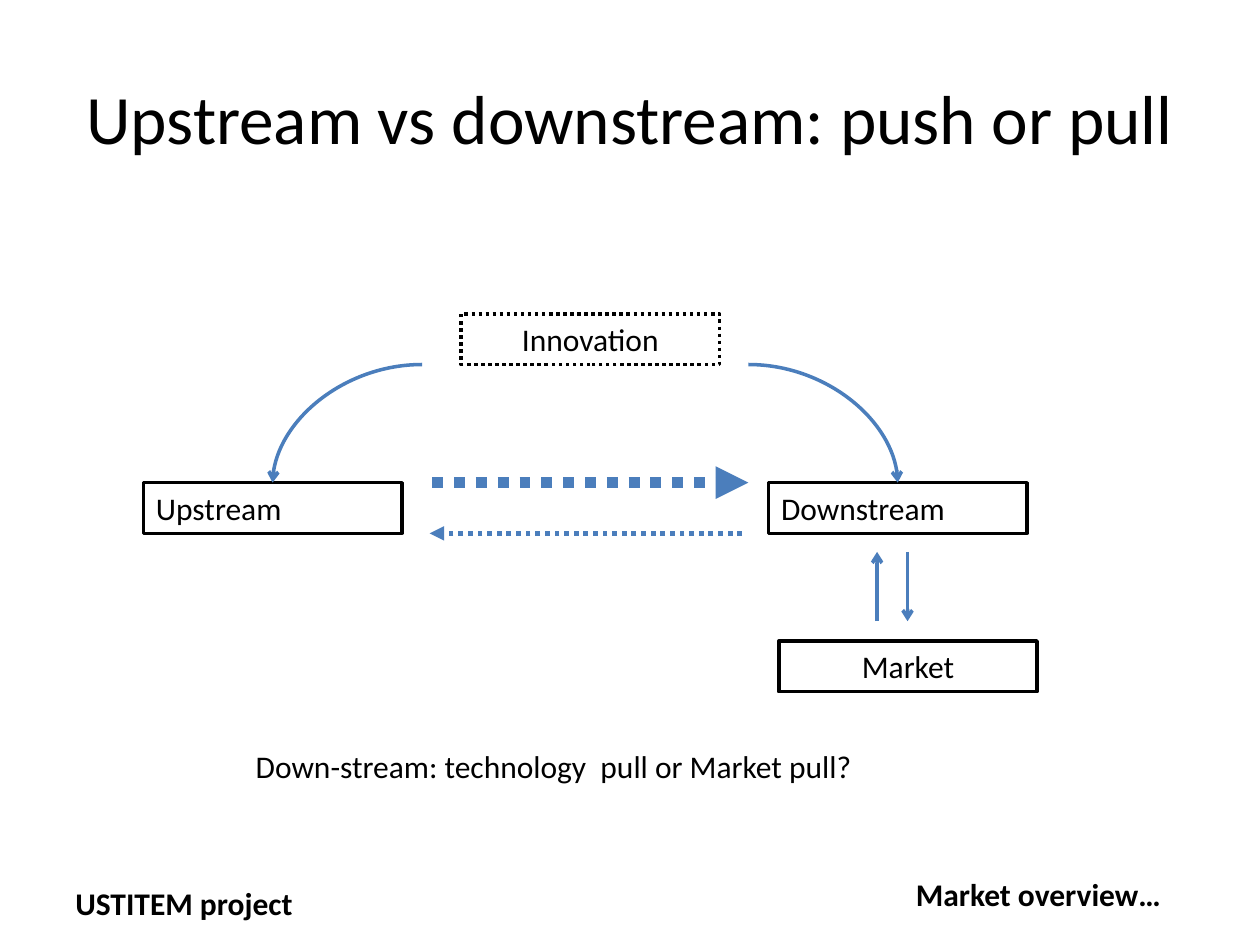
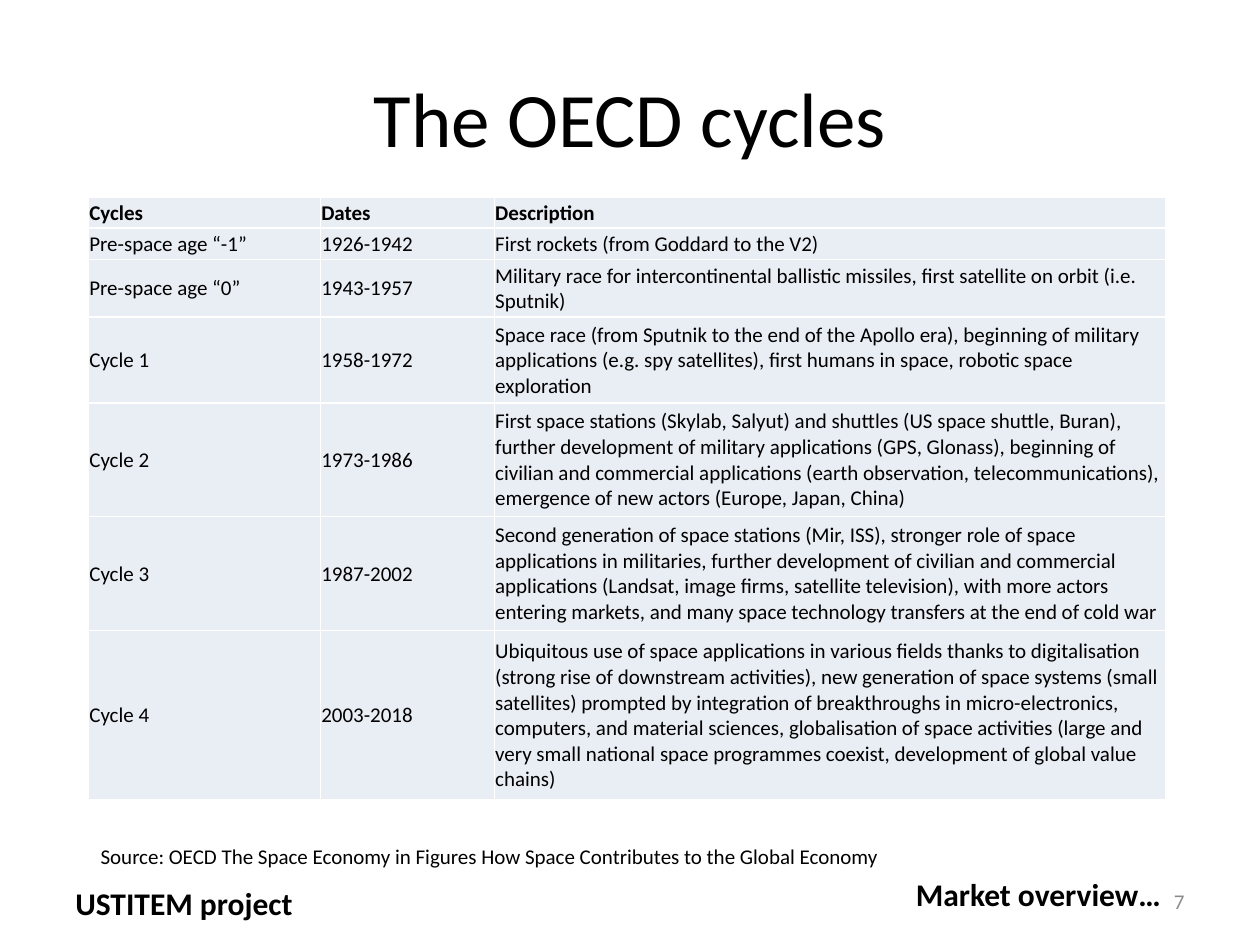
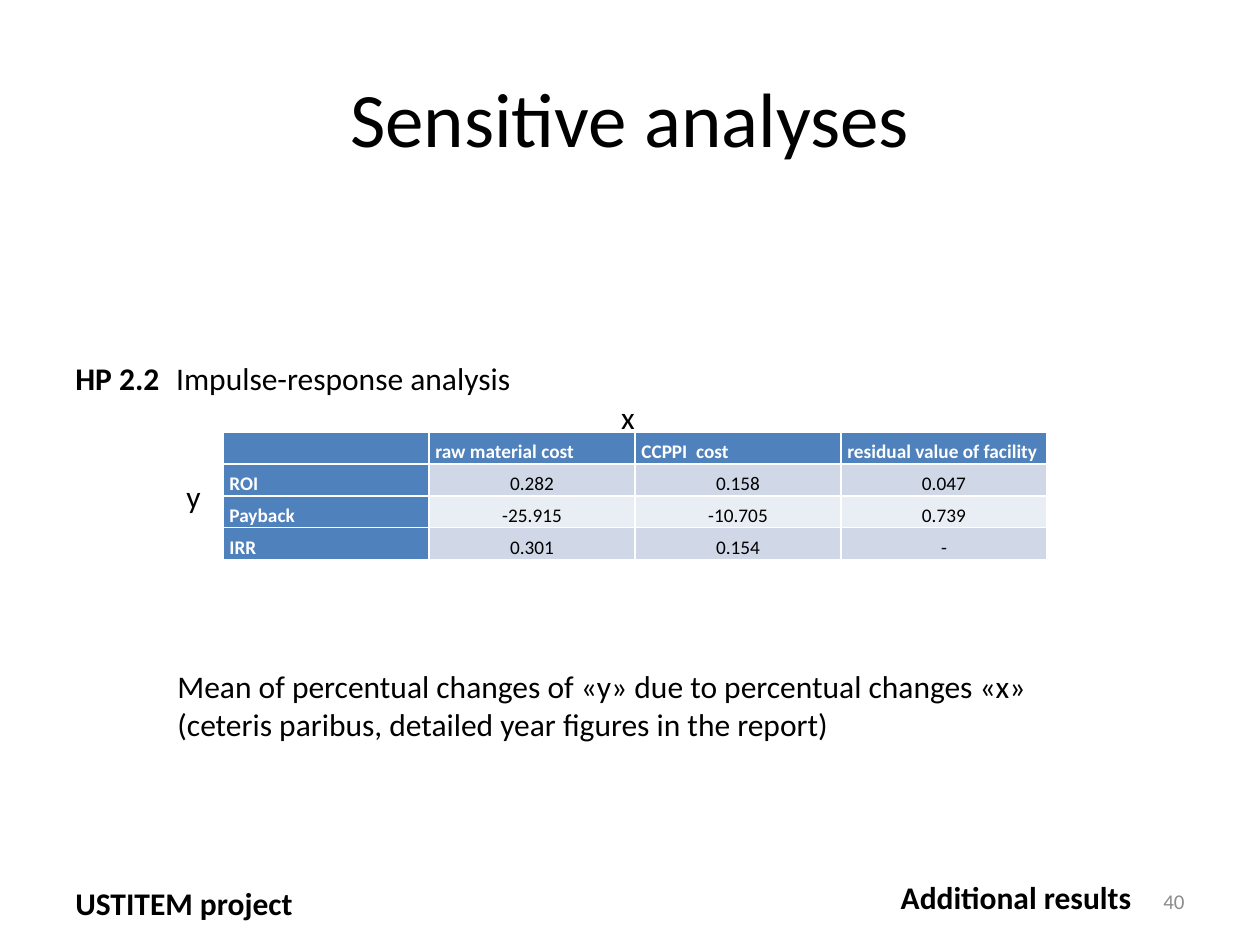
import lxml.etree
import pptx
import pptx.dml.color
import pptx.enum.dml
import pptx.enum.shapes
import pptx.enum.text
import pptx.oxml.ns
import pptx.util

Pt = pptx.util.Pt
qn = pptx.oxml.ns.qn
ALIGN = pptx.enum.text.PP_ALIGN
ANCHOR = pptx.enum.text.MSO_ANCHOR
DASH = pptx.enum.dml.MSO_LINE
CONNECTOR = pptx.enum.shapes.MSO_CONNECTOR

FONT = "Calibri"
COLORS = {
    "text": "000000",
    "white": "FFFFFF",
    "muted": "8C8C8C",
    "arrow": "4B7EBC",
    "header": "4F81BD",
    "band_dark": "D0D8E8",
    "band_light": "E9EDF4",
}
BODY_SIZE = 18
TITLE_BOX = (36, 21.6, 648, 90)
PROJECT_BOX = (36, 501.8, 144, 29)
NUMBER_BOX = (516.25, 500.4, 167.75, 29)
OVERVIEW_BOX = (516.25, 496.4, 156.2, 29)
RESULTS_BOX = (507.6, 498.2, 147.6, 29)

CYCLES = [
    ("Cycles", "Dates", "Description"),
    ("Pre-space age “-1”", "1926-1942", "First rockets (from Goddard to the V2)"),
    ("Pre-space age “0”", "1943-1957",
     "Military race for intercontinental ballistic missiles, first satellite "
     "on orbit (i.e. Sputnik)"),
    ("Cycle 1", "1958-1972",
     "Space race (from Sputnik to the end of the Apollo era), beginning of "
     "military applications (e.g. spy satellites), first humans in space, "
     "robotic space exploration"),
    ("Cycle 2", "1973-1986",
     "First space stations (Skylab, Salyut) and shuttles (US space shuttle, "
     "Buran), further development of military applications (GPS, Glonass), "
     "beginning of civilian and commercial applications (earth observation, "
     "telecommunications), emergence of new actors (Europe, Japan, China)"),
    ("Cycle 3", "1987-2002",
     "Second generation of space stations (Mir, ISS), stronger role of space "
     "applications in militaries, further development of civilian and "
     "commercial applications (Landsat, image firms, satellite television), "
     "with more actors entering markets, and many space technology transfers "
     "at the end of cold war"),
    ("Cycle 4", "2003-2018",
     "Ubiquitous use of space applications in various fields thanks to "
     "digitalisation (strong rise of downstream activities), new generation "
     "of space systems (small satellites) prompted by integration of "
     "breakthroughs in micro-electronics, computers, and material sciences, "
     "globalisation of space activities (large and very small national space "
     "programmes coexist, development of global value chains)"),
]
CYCLE_COLUMNS = (132.5, 99.4, 383.7)
CYCLE_ROWS = (17.3, 18, 33, 49, 65, 65, 97)

RESPONSES = [
    ("", "raw material cost", "CCPPI  cost", "residual value of facility"),
    ("ROI", "0.282", "0.158", "0.047"),
    ("Payback", "-25.915", "-10.705", "0.739"),
    ("IRR", "0.301", "0.154", "-"),
]


def rgb(name):
    return pptx.dml.color.RGBColor.from_string(COLORS[name])


def points(values):
    return [Pt(value) for value in values]


def write(p, text, size=BODY_SIZE, color="text", bold=False, align=ALIGN.LEFT):
    """Add one run, or only set the paragraph's size when there is no text."""
    p.alignment = align
    if not text:
        lxml.etree.SubElement(p._p, qn("a:endParaRPr"), sz=str(size * 100))
        return
    r = p.add_run()
    r.text = text
    r.font.name = FONT
    r.font.size = Pt(size)
    r.font.bold = bold
    r.font.color.rgb = rgb(color)


def add_text(s, box, *lines, wrap=False, anchor=ANCHOR.TOP, **style):
    """Write each line as a paragraph of one text box."""
    tf = s.shapes.add_textbox(*points(box)).text_frame
    tf.word_wrap = wrap
    tf.vertical_anchor = anchor
    for i, line in enumerate(lines):
        write(tf.add_paragraph() if i else tf.paragraphs[0], line, **style)


def add_node(s, box, text, align=ALIGN.CENTER, dash=None):
    sp = s.shapes.add_shape(pptx.enum.shapes.MSO_SHAPE.RECTANGLE, *points(box))
    sp.shadow.inherit = False
    sp.fill.background()
    sp.line.color.rgb = rgb("text")
    sp.line.width = Pt(2)
    sp.line.dash_style = dash
    tf = sp.text_frame
    tf.word_wrap = True
    tf.vertical_anchor = ANCHOR.TOP
    write(tf.paragraphs[0], text, align=align)


def add_arrow(s, start, end, width=2, head="arrow", dash=None, curved=False):
    kind = CONNECTOR.CURVE if curved else CONNECTOR.STRAIGHT
    sp = s.shapes.add_connector(kind, *points((*start, *end)))
    sp.line.color.rgb = rgb("arrow")
    sp.line.width = Pt(width)
    sp.line.dash_style = dash
    sp_pr = sp._element.spPr
    if curved:
        sp_pr.find(qn("a:prstGeom")).set("prst", "curvedConnector2")
    lxml.etree.SubElement(sp_pr.find(qn("a:ln")), qn("a:tailEnd"), type=head)
    lxml.etree.SubElement(sp_pr, qn("a:effectLst"))


def add_grid(s, origin, columns, rows):
    """Add an unbanded table with the given column widths and row heights."""
    box = (*origin, sum(columns), sum(rows))
    table = s.shapes.add_table(len(rows), len(columns), *points(box)).table
    table.horz_banding = False
    for column, width in zip(table.columns, columns):
        column.width = Pt(width)
    for row, height in zip(table.rows, rows):
        row.height = Pt(height)
    return table


def fill_cell(cell, text, fill, margins, anchor, spacing=None, **style):
    cell.fill.solid()
    cell.fill.fore_color.rgb = rgb(fill)
    (cell.margin_left, cell.margin_top,
     cell.margin_right, cell.margin_bottom) = points(margins)
    cell.vertical_anchor = anchor
    p = cell.text_frame.paragraphs[0]
    p.line_spacing = spacing
    write(p, text, **style)


def add_frame(prs, title, section, section_box, number=None, title_size=44):
    """Start a slide with its title, footers and page number."""
    s = prs.slides.add_slide(prs.slide_layouts[6])
    add_text(s, PROJECT_BOX, "USTITEM project", bold=True)
    add_text(s, TITLE_BOX, title, wrap=True, anchor=ANCHOR.MIDDLE,
             size=title_size, align=ALIGN.CENTER)
    add_text(s, section_box, section, bold=True)
    if number:
        add_text(s, NUMBER_BOX, number, wrap=True, anchor=ANCHOR.MIDDLE,
                 size=12, color="muted", align=ALIGN.RIGHT)
    return s


def add_flow(s, box):
    """Draw innovation feeding upstream and downstream, and the market below."""
    left, top, width, height = box
    node_w, node_h = 147.6, 29
    row_y = top + 96.5
    down_x = left + 357.2
    add_node(s, (left, row_y, node_w, node_h), "Upstream", ALIGN.LEFT)
    add_node(s, (down_x, row_y, node_w, node_h), "Downstream", ALIGN.LEFT)
    add_node(s, (left + 181.5, top, node_w, node_h), "Innovation",
             dash=DASH.ROUND_DOT)
    add_node(s, (left + width - node_w, top + height - node_h, node_w, node_h),
             "Market")

    gap_left, gap_right = left + 165, left + 345.7
    for start_x, node_x in ((gap_right, down_x), (gap_left - 5.8, left)):
        add_arrow(s, (start_x, top + node_h),
                  (node_x + node_w / 2, row_y), curved=True)
    add_arrow(s, (gap_left, row_y), (gap_right, row_y), 6.25, "triangle",
              DASH.ROUND_DOT)
    add_arrow(s, (gap_right - 3.6, row_y + node_h),
              (gap_left - 1.5, row_y + node_h), 2.75, "triangle",
              DASH.ROUND_DOT)
    upper, lower = row_y + 39.6, row_y + 79.2
    add_arrow(s, (down_x + 79.4, upper), (down_x + 79.4, lower))
    add_arrow(s, (down_x + 62, lower), (down_x + 62, upper))


def add_cycle_table(s, origin):
    table = add_grid(s, origin, CYCLE_COLUMNS, CYCLE_ROWS)
    table.first_row = False
    for i, row in enumerate(CYCLES):
        for j, text in enumerate(row):
            fill_cell(table.cell(i, j), text, "band_light",
                      (0.5, 0.5, 0.5, 0), ANCHOR.MIDDLE, size=12, bold=i == 0)


def add_response_table(s, box):
    left, top, width, height = box
    n_rows, n_columns = len(RESPONSES), len(RESPONSES[0])
    table = add_grid(s, (left, top), [width / n_columns] * n_columns,
                     [height / n_rows] * n_rows)
    table.first_col = True
    for i, row in enumerate(RESPONSES):
        band = "band_dark" if i % 2 else "band_light"
        for j, text in enumerate(row):
            head = i == 0 or j == 0
            fill_cell(table.cell(i, j), text, "header" if head else band,
                      (3.6, 0, 3.6, 0), ANCHOR.BOTTOM, spacing=1.15, size=11,
                      color="white" if head else "text", bold=head,
                      align=ALIGN.LEFT if head else ALIGN.CENTER)


def add_response_panel(s, box):
    """Place the heading, the labelled table and the note under it."""
    left, top, width, height = box
    add_text(s, (left, top, 63.4, 29), "HP 2.2", bold=True)
    add_text(s, (left + 57.6, top, 206, 29), "Impulse-response analysis")
    add_response_table(s, (left + 91.5, top + 45.4, 470.8, 72.6))
    add_text(s, (left + 63.4, top + 67.7, 23, 29), "y")
    add_text(s, (left + 311.8, top + 22.3, 22.3, 29), "x")
    add_text(s, (left + 58.3, top + height - 51, width - 58.3, 51),
             "Mean of percentual changes of «y» due to percentual changes «x»",
             "(ceteris paribus, detailed year figures in the report)")


def main():
    prs = pptx.Presentation()
    prs.slide_width, prs.slide_height = Pt(720), Pt(540)

    s = add_frame(prs, "Upstream vs downstream: push or pull",
                  "Market overview…", OVERVIEW_BOX, title_size=39.6)
    add_flow(s, (82, 179.3, 510.6, 216))
    add_text(s, (139, 423.4, 359.3, 29),
             "Down-stream: technology  pull or Market pull?")

    s = add_frame(prs, "The OECD cycles", "Market overview…", OVERVIEW_BOX, "7")
    add_cycle_table(s, (50.6, 113))
    add_text(s, (50.4, 478.4, 643.7, 44),
             "Source: OECD The Space Economy in Figures How Space Contributes "
             "to the Global Economy", wrap=True, size=12)

    s = add_frame(prs, "Sensitive analyses", "Additional results", RESULTS_BOX,
                  "40")
    add_response_panel(s, (36, 201.6, 568, 227))

    prs.save("out.pptx")


if __name__ == "__main__":
    main()
